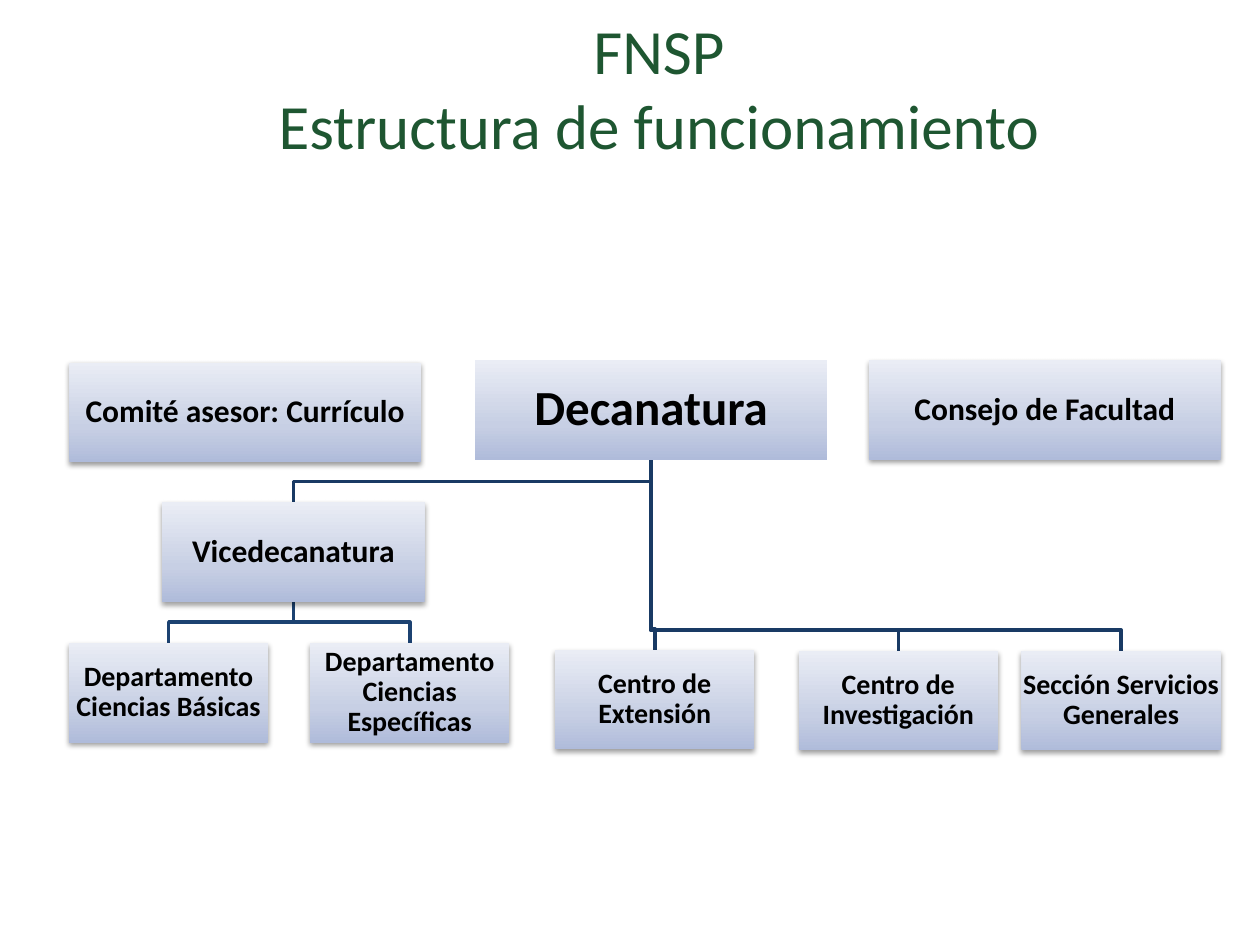
from lxml.etree import fromstring
from pptx import Presentation
from pptx.dml.color import RGBColor as Rgb
from pptx.enum.shapes import MSO_SHAPE as Kind
from pptx.enum.text import MSO_ANCHOR as Anchor, PP_ALIGN as Align
from pptx.oxml.ns import nsdecls
from pptx.util import Cm, Pt

COLORS = {"text": "000000", "title": "1E5631", "rim": "FFFFFF",
          "main": "193A64", "sub": "1C4271",
          "low": "AFBBDA", "mid": "C7CFE4", "high": "EAEDF5"}
FONT = "Calibri"
TITLE = ["FNSP", "Estructura de funcionamiento"]
HIGH, BEND = 2.01, 0.42
WIDE, HALF, SLIM = 7.09, 5.29, 4.02

BOXES = {
    "advice": ("Comité asesor: Currículo", 1.4, 7.31, WIDE, 18),
    "dean": ("Decanatura", 9.58, 7.26, WIDE, 28),
    "vice": ("Vicedecanatura", 3.27, 10.13, HALF, 18),
    "basic": ("Departamento Ciencias Básicas", 1.39, 12.96, SLIM, 16),
    "field": ("Departamento Ciencias Específicas", 6.25, 12.96, SLIM, 16),
    "reach": ("Centro de Extensión", 11.19, 13.1, SLIM, 16),
    "study": ("Centro de Investigación", 16.1, 13.12, SLIM, 16),
    "staff": ("Sección Servicios Generales", 20.59, 13.12, SLIM, 16),
    "board": ("Consejo de Facultad", 17.52, 7.26, WIDE, 18),
}
LINKS = [("dean", "staff", "main"), ("dean", "study", "main"),
         ("dean", "reach", "main"), ("vice", "field", "sub"),
         ("vice", "basic", "sub"), ("dean", "vice", "main")]

GRAD = f"""<a:gradFill {nsdecls("a")} rotWithShape="1"><a:gsLst>
<a:gs pos="0"><a:srgbClr val="{COLORS['low']}"/></a:gs>
<a:gs pos="35000"><a:srgbClr val="{COLORS['mid']}"/></a:gs>
<a:gs pos="100000"><a:srgbClr val="{COLORS['high']}"/></a:gs>
</a:gsLst><a:lin ang="16200000" scaled="1"/></a:gradFill>"""
SHADE = f"""<a:outerShdw {nsdecls("a")} blurRad="40000" dist="20000" dir="5400000"
rotWithShape="0"><a:srgbClr val="000000"><a:alpha val="38000"/></a:srgbClr></a:outerShdw>"""
RIM = f"""<a:ln {nsdecls("a")} w="18400"><a:solidFill>
<a:srgbClr val="{COLORS['rim']}"/></a:solidFill></a:ln>"""


def write(par, text, size, color, bold=False):
    par.alignment = Align.CENTER
    run = par.add_run()
    run.text = text
    font = run.font
    font.name, font.size, font.bold = FONT, Pt(size), bold
    font.color.rgb = Rgb.from_string(COLORS[color])
    return run


def add_title(slide):
    box = slide.shapes.add_textbox(Cm(4.7), Cm(0.1), Cm(17.17), Cm(3.33))
    frame = box.text_frame
    frame.word_wrap = True
    for i, text in enumerate(TITLE):
        par = frame.add_paragraph() if i else frame.paragraphs[0]
        run = write(par, text, 36, "title")
        run.font._element.insert(0, fromstring(RIM))
        indent = par._p.get_or_add_pPr()
        indent.set("marL", str(Cm(1.19)))
        indent.set("indent", str(Cm(-1.19)))


def add_link(slide, start, end, color):
    _, left, top, wide, _ = BOXES[start]
    x1, y1 = left + wide / 2, top + HIGH
    _, left, y2, wide, _ = BOXES[end]
    x2, bend = left + wide / 2, y2 - BEND
    spots = [(Cm(x), Cm(y)) for x, y in [(x1, bend), (x2, bend), (x2, y2)]]
    pen = slide.shapes.build_freeform(Cm(x1), Cm(y1))
    pen.add_line_segments(spots, close=False)
    link = pen.convert_to_shape()
    link.fill.background()
    link.line.color.rgb = Rgb.from_string(COLORS[color])
    link.line.width = Pt(2)
    link.shadow.inherit = False


def add_box(slide, name):
    text, left, top, wide, size = BOXES[name]
    box = slide.shapes.add_shape(Kind.RECTANGLE, Cm(left), Cm(top), Cm(wide), Cm(HIGH))
    box.line.fill.background()
    box.shadow.inherit = False
    props = box._element.spPr
    props.insert(2, fromstring(GRAD))
    if name != "dean":
        props[-1].append(fromstring(SHADE))
    frame = box.text_frame
    frame.word_wrap = True
    frame.vertical_anchor = Anchor.MIDDLE
    frame.margin_left = frame.margin_right = Cm(0.02)
    frame.margin_top = frame.margin_bottom = Cm(0.02)
    par = frame.paragraphs[0]
    par.line_spacing = 0.9
    write(par, text, size, "text", True)


def main():
    deck = Presentation()
    deck.slide_width, deck.slide_height = Cm(25.4), Cm(19.05)
    slide = deck.slides.add_slide(deck.slide_layouts[6])
    add_title(slide)
    for link in LINKS:
        add_link(slide, *link)
    for name in BOXES:
        add_box(slide, name)
    deck.save("out.pptx")


if __name__ == "__main__":
    main()
